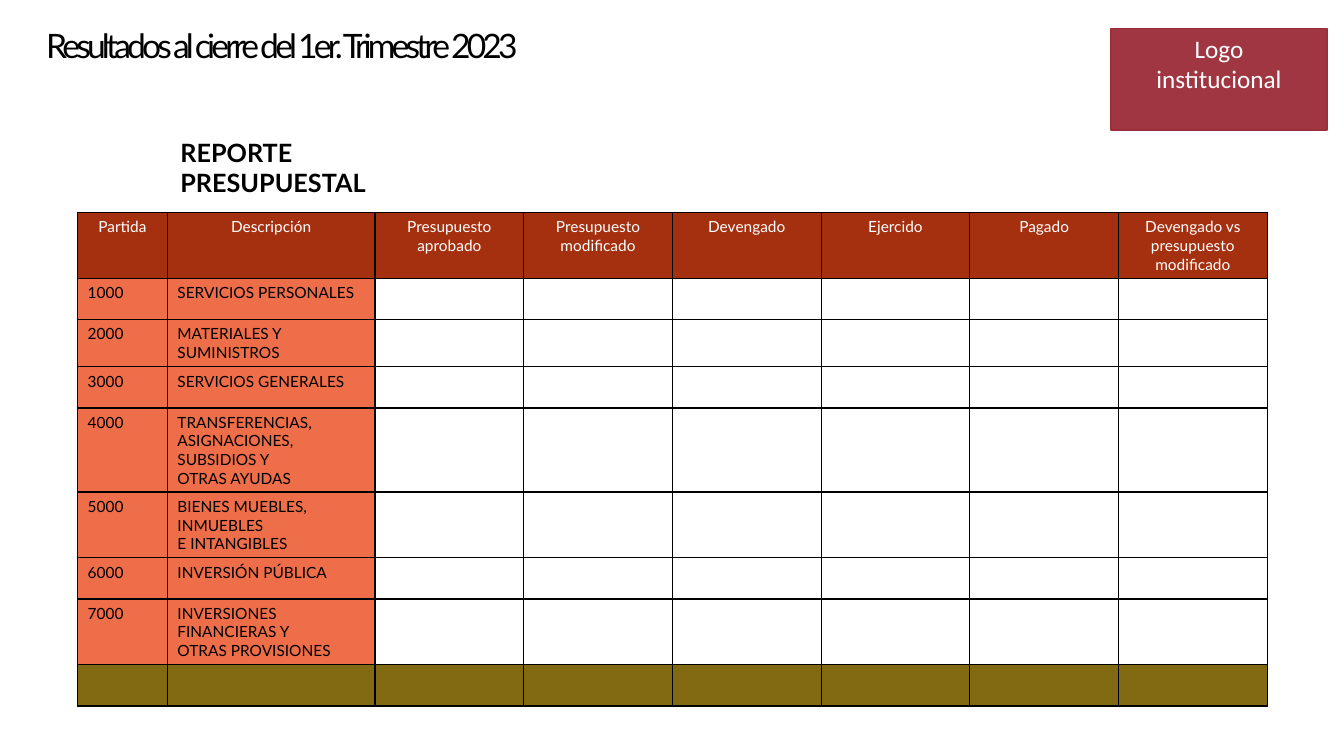
from dataclasses import dataclass

from lxml import etree
from pptx import Presentation
from pptx.dml.color import RGBColor
from pptx.enum.shapes import MSO_SHAPE
from pptx.enum.text import MSO_ANCHOR, PP_ALIGN
from pptx.oxml.ns import qn
from pptx.util import Inches, Pt

RECTANGLE = MSO_SHAPE.RECTANGLE
TOP, MIDDLE = MSO_ANCHOR.TOP, MSO_ANCHOR.MIDDLE
LEFT, CENTER = PP_ALIGN.LEFT, PP_ALIGN.CENTER

BLACK = RGBColor(0x00, 0x00, 0x00)
WHITE = RGBColor(0xFF, 0xFF, 0xFF)
RUST = RGBColor(0xA5, 0x30, 0x0F)
CORAL = RGBColor(0xEE, 0x6E, 0x4A)
OLIVE = RGBColor(0x82, 0x6A, 0x12)
WINE = RGBColor(0x9D, 0x2E, 0x3B)


@dataclass(frozen=True)
class TextStyle:
    size: float
    color: RGBColor = BLACK
    font: str = "Lato"
    bold: bool = False
    align: PP_ALIGN = LEFT
    line_spacing: float = 1.0
    tracking: float = 0


@dataclass(frozen=True)
class Heading:
    text: str
    left: float
    top: float
    width: float
    height: float
    anchor: MSO_ANCHOR
    style: TextStyle


@dataclass(frozen=True)
class BudgetChapter:
    code: str
    description: str


HEADINGS = [
    Heading("Resultados al cierre del 1er. Trimestre 2023", 0.36, 0.24, 5.54, 0.46, MIDDLE,
            TextStyle(24, line_spacing=0.9, tracking=-2.73)),
    Heading("REPORTE PRESUPUESTAL", 1.69, 1.31, 2.89, 0.4, TOP, TextStyle(18, bold=True)),
]
COLUMN_TITLES = [
    "Partida", "Descripción", "Presupuesto aprobado", "Presupuesto modificado",
    "Devengado", "Ejercido", "Pagado", "Devengado vs\npresupuesto\nmodificado",
]
CHAPTERS = [
    BudgetChapter("1000", "SERVICIOS PERSONALES"),
    BudgetChapter("2000", "MATERIALES Y SUMINISTROS"),
    BudgetChapter("3000", "SERVICIOS GENERALES"),
    BudgetChapter("4000", "TRANSFERENCIAS,\nASIGNACIONES, SUBSIDIOS Y\nOTRAS AYUDAS"),
    BudgetChapter("5000", "BIENES MUEBLES, INMUEBLES\nE INTANGIBLES"),
    BudgetChapter("6000", "INVERSIÓN PÚBLICA"),
    BudgetChapter("7000", "INVERSIONES FINANCIERAS Y\nOTRAS PROVISIONES"),
]
AMOUNT_COUNT = len(COLUMN_TITLES) - 2
COLUMN_WIDTHS = [0.89, 2.06] + [1.475] * AMOUNT_COUNT
ROW_HEIGHT = 0.41
HEADER_STYLE = TextStyle(11, WHITE, align=CENTER)
CHAPTER_STYLE = TextStyle(11)
LOGO_STYLE = TextStyle(18, WHITE, "Calibri", align=CENTER)


def write(frame, text: str, style: TextStyle) -> None:
    for index, line in enumerate(text.split("\n")):
        paragraph = frame.paragraphs[0] if index == 0 else frame.add_paragraph()
        paragraph.alignment = style.align
        paragraph.line_spacing = style.line_spacing
        if not line:
            paragraph.font.size = Pt(style.size)
            continue
        run = paragraph.add_run()
        run.text = line
        run.font.name = style.font
        run.font.size = Pt(style.size)
        run.font.bold = style.bold
        run.font.color.rgb = style.color
        if style.tracking:
            run.font._element.set("spc", str(round(style.tracking * 100)))


def add_heading(slide, heading: Heading) -> None:
    box = slide.shapes.add_textbox(Inches(heading.left), Inches(heading.top),
                                   Inches(heading.width), Inches(heading.height))
    box.text_frame.word_wrap = True
    box.text_frame.vertical_anchor = heading.anchor
    write(box.text_frame, heading.text, heading.style)


def outline_cell(cell) -> None:
    properties = cell._tc.get_or_add_tcPr()
    for position, side in enumerate(("lnL", "lnR", "lnT", "lnB")):
        border = etree.Element(qn(f"a:{side}"), w=str(Pt(1)))
        solid = etree.SubElement(border, qn("a:solidFill"))
        etree.SubElement(solid, qn("a:srgbClr"), val=str(BLACK))
        properties.insert(position, border)


def fill_cell(cell, text: str, style: TextStyle, color: RGBColor | None) -> None:
    if color is None:
        cell.fill.background()
    else:
        cell.fill.solid()
        cell.fill.fore_color.rgb = color
    outline_cell(cell)
    write(cell.text_frame, text, style)


def add_budget_table(slide) -> None:
    blanks = [""] * AMOUNT_COUNT
    rows = [(COLUMN_TITLES, HEADER_STYLE, [RUST] * len(COLUMN_TITLES))]
    for chapter in CHAPTERS:
        rows.append(([chapter.code, chapter.description] + blanks, CHAPTER_STYLE,
                     [CORAL] * 2 + [None] * AMOUNT_COUNT))
    rows.append(([""] * len(COLUMN_TITLES), CHAPTER_STYLE, [OLIVE] * len(COLUMN_TITLES)))

    table = slide.shapes.add_table(
        len(rows), len(COLUMN_TITLES), Inches(0.77), Inches(2.11),
        Inches(sum(COLUMN_WIDTHS)), Inches(ROW_HEIGHT * len(rows))).table
    table.first_row = False
    table.horz_banding = False
    for column, width in zip(table.columns, COLUMN_WIDTHS):
        column.width = Inches(width)
    for row, (texts, style, colors) in zip(table.rows, rows):
        row.height = Inches(ROW_HEIGHT)
        for cell, text, color in zip(row.cells, texts, colors):
            fill_cell(cell, text, style, color)


def add_logo_block(slide) -> None:
    logo = slide.shapes.add_shape(RECTANGLE, Inches(11.02), Inches(0.28),
                                  Inches(2.14), Inches(1.01))
    logo.shadow.inherit = False
    logo.fill.solid()
    logo.fill.fore_color.rgb = WINE
    tint = logo._element.spPr.find(qn("a:solidFill")).find(qn("a:srgbClr"))
    etree.SubElement(tint, qn("a:alpha"), val="96000")
    logo.line.color.rgb = WINE
    logo.line.width = Pt(1)
    logo.text_frame.word_wrap = True
    logo.text_frame.vertical_anchor = TOP
    write(logo.text_frame, "Logo\ninstitucional", LOGO_STYLE)


def main() -> None:
    presentation = Presentation()
    presentation.slide_width = Inches(13.33)
    presentation.slide_height = Inches(7.5)
    slide = presentation.slides.add_slide(presentation.slide_layouts[6])
    for heading in HEADINGS:
        add_heading(slide, heading)
    add_budget_table(slide)
    add_logo_block(slide)
    presentation.save("out.pptx")


if __name__ == "__main__":
    main()
